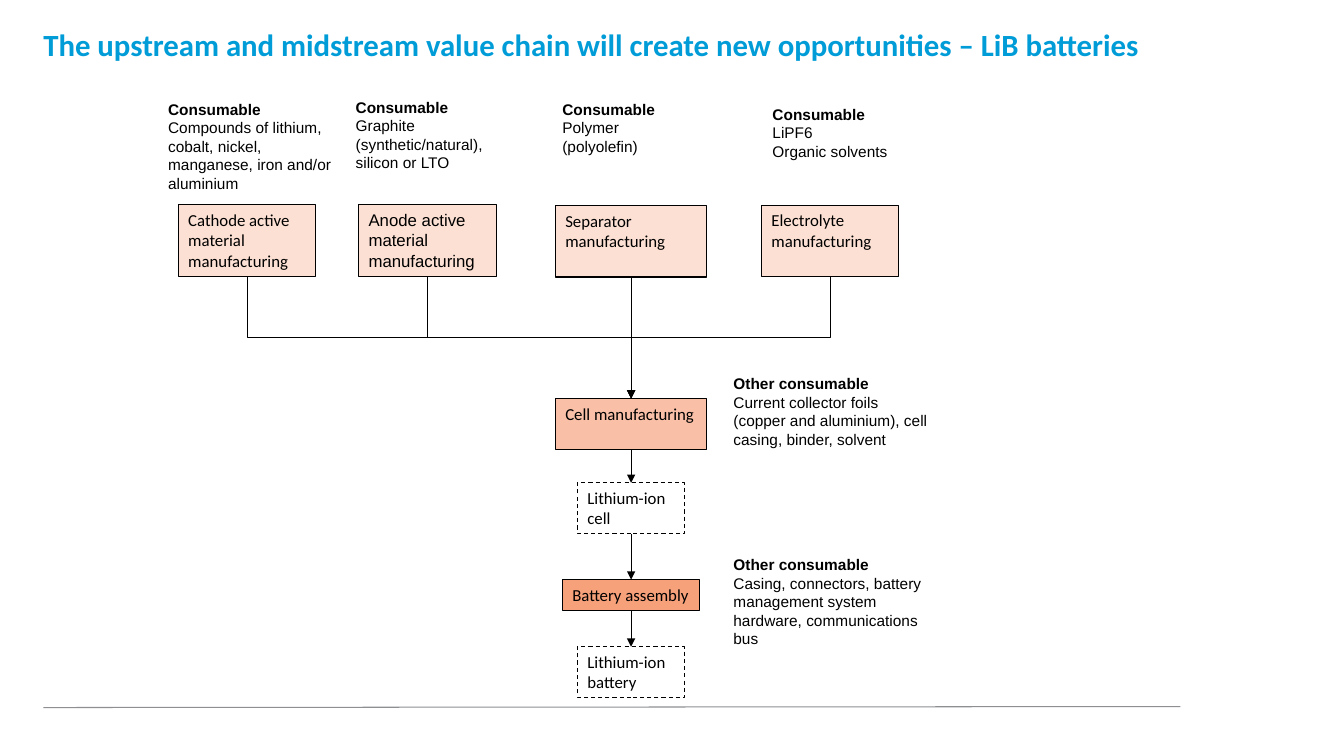
from lxml import etree
from pptx import Presentation
from pptx.dml.color import RGBColor
from pptx.enum import dml, shapes, text
from pptx.oxml import ns
from pptx.util import Pt

COLOURS = {
    "title": "009CD8", "ink": "000000", "rule": "8D8F93",
    "material": "FCE0D3", "cell": "F9C0A7", "assembly": "F7A17B",
}


def colour(name):
    return RGBColor.from_string(COLOURS[name])


class ValueChainSlide:
    heading_font, note_font = "Calibri", "Arial"

    def __init__(self, deck):
        self.page = deck.slides.add_slide(deck.slide_layouts[6])

    def set_text(self, box, lines, size, font, ink="ink", bold_first=False):
        frame = box.text_frame
        frame.text = "\n".join(lines)
        frame.word_wrap = True
        frame.vertical_anchor = text.MSO_ANCHOR.TOP
        for index, para in enumerate(frame.paragraphs):
            para.alignment = text.PP_ALIGN.LEFT
            for span in para.runs:
                span.font.size = Pt(size)
                span.font.name = font
                span.font.bold = bold_first and index == 0
                span.font.color.rgb = colour(ink)
        return frame

    def title(self, words):
        box = self.page.shapes.add_textbox(Pt(31), Pt(15.1), Pt(888.5), Pt(62.6))
        frame = self.set_text(box, [words], 22, self.heading_font, "title", True)
        frame.margin_left = frame.margin_right = 0

    def note(self, left, top, width, height, lines):
        """Add a text block with a bold first line."""
        box = self.page.shapes.add_textbox(Pt(left), Pt(top), Pt(width), Pt(height))
        frame = self.set_text(box, lines, 11, self.note_font, bold_first=True)
        frame.auto_size = text.MSO_AUTO_SIZE.SHAPE_TO_FIT_TEXT

    def step(self, left, top, width, height, lines, fill=None, font=heading_font):
        """Add a filled process box, or a dashed product box when fill is None."""
        box = self.page.shapes.add_shape(
            shapes.MSO_SHAPE.RECTANGLE, Pt(left), Pt(top), Pt(width), Pt(height))
        box.shadow.inherit = False
        box.line.color.rgb = colour("ink")
        box.line.width = Pt(0.75)
        if fill:
            box.fill.solid()
            box.fill.fore_color.rgb = colour(fill)
        else:
            box.fill.background()
            box.line.dash_style = dml.MSO_LINE.DASH
        frame = self.set_text(box, lines, 12, font)
        frame.auto_size = text.MSO_AUTO_SIZE.SHAPE_TO_FIT_TEXT

    def line(self, x1, y1, x2, y2, ink="ink", width=0.5, arrow=True,
             kind=shapes.MSO_CONNECTOR.STRAIGHT):
        link = self.page.shapes.add_connector(kind, Pt(x1), Pt(y1), Pt(x2), Pt(y2))
        link.line.color.rgb = colour(ink)
        link.line.width = Pt(width)
        properties = link._element.spPr
        if arrow:
            outline = properties.find(ns.qn("a:ln"))
            etree.SubElement(outline, ns.qn("a:tailEnd"), type="triangle")
        etree.SubElement(properties, ns.qn("a:effectLst"))
        return link

    def elbow(self, x1, y1, x2, y2):
        """Add an arrow that goes down, across and down again."""
        middle_x, middle_y = (x1 + x2) / 2, (y1 + y2) / 2
        half_drop, half_run = (y2 - y1) / 2, abs(x2 - x1) / 2
        rightward = x2 > x1
        side = half_drop if rightward else -half_drop
        link = self.line(middle_x + side, middle_y - half_run,
                         middle_x - side, middle_y + half_run,
                         kind=shapes.MSO_CONNECTOR.ELBOW)
        degrees = 270 if rightward else 90
        link._element.spPr.find(ns.qn("a:xfrm")).set("rot", str(degrees * 60000))


def main():
    deck = Presentation()
    deck.slide_width, deck.slide_height = Pt(960), Pt(540)
    slide = ValueChainSlide(deck)
    slide.line(31, 505.4, 843.1, 504.7, "rule", 0.75, arrow=False)
    slide.title("The upstream and midstream value chain will create new opportunities – LiB batteries")

    axis, cell_top = 450.8, 284.6
    materials = [
        (127.4, 146.4, 98.2, ["Cathode active material manufacturing"], "Calibri"),
        (256.2, 146.4, 98.2, ["Anode active material manufacturing"], "Arial"),
        (396.7, 146.9, 108.2, ["Separator", "manufacturing"], "Calibri"),
        (544, 146.6, 98.2, ["Electrolyte manufacturing"], "Calibri"),
    ]
    for left, top, width, lines, font in materials:
        slide.step(left, top, width, 51, lines, "material", font)
        centre, bottom = left + width / 2, top + 51
        if abs(centre - axis) < 1:
            slide.line(axis, bottom, axis, cell_top)
        else:
            slide.elbow(centre, bottom, axis, cell_top)

    stages = [
        (cell_top, 108.2, 36.4, "Cell manufacturing", "cell"),
        (344.9, 76.6, 36.4, "Lithium-ion cell", None),
        (414, 98.2, 21.8, "Battery assembly", "assembly"),
        (462, 76.6, 36.4, "Lithium-ion battery", None),
    ]
    for top, width, height, label, fill in stages:
        slide.step(axis - width / 2, top, width, height, [label], fill)
    for above, below in zip(stages, stages[1:]):
        slide.line(axis, above[0] + above[2], axis, below[0])

    consumable, other = "Consumable", "Other consumable"
    notes = [
        (113, 67.7, 143.3, 100.8,
         [consumable, "Compounds of lithium, cobalt, nickel, manganese, iron and/or aluminium"]),
        (247, 66.5, 122.4, 87.1,
         [consumable, "Graphite (synthetic/natural), silicon or LTO"]),
        (394.6, 67.9, 97.9, 74.2, [consumable, "Polymer (polyolefin)"]),
        (544.7, 71.5, 97.9, 74.2, [consumable, "LiPF6", "Organic solvents"]),
        (516.8, 263.7, 154.1, 87.1,
         [other, "Current collector foils (copper and aluminium), cell casing, binder, solvent"]),
        (516.8, 393.1, 154.1, 100.8,
         [other, "Casing, connectors, battery management system hardware, communications bus"]),
    ]
    for note in notes:
        slide.note(*note)
    deck.save("out.pptx")


if __name__ == "__main__":
    main()
